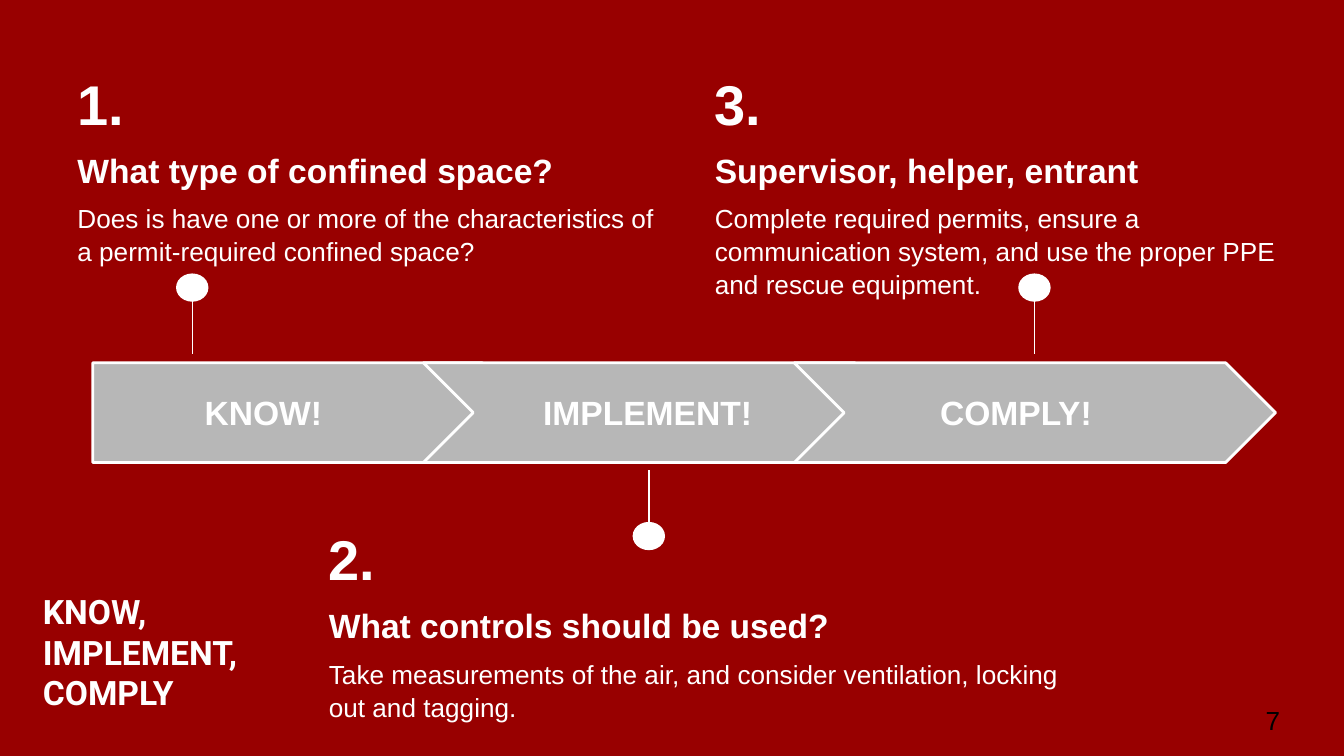
from dataclasses import dataclass

from pptx import Presentation
from pptx.dml.color import RGBColor
from pptx.enum.shapes import MSO_CONNECTOR, MSO_SHAPE
from pptx.enum.text import MSO_ANCHOR, MSO_AUTO_SIZE, PP_ALIGN
from pptx.oxml.ns import qn
from pptx.util import Pt


@dataclass(frozen=True)
class Theme:
    background: RGBColor = RGBColor(0x98, 0x00, 0x00)
    light: RGBColor = RGBColor(0xFF, 0xFF, 0xFF)
    arrow: RGBColor = RGBColor(0xB7, 0xB7, 0xB7)
    page: RGBColor = RGBColor(0x00, 0x00, 0x00)
    title_font: str = "Roboto"
    body_font: str = "Arial"
    number_size: float = 30
    heading_size: float = 18
    body_size: float = 14


THEME = Theme()
ARROW_TOP, ARROW_HEIGHT = 194.4, 53.4
LABEL_TOP, LABEL_HEIGHT = 203.8, 33.8
DOT_WIDTH, DOT_HEIGHT = 16.6, 14.4

# Arrow shape, arrow left and width, label, label left and width
ARROWS = [
    (MSO_SHAPE.PENTAGON, 49.7, 235.4, "KNOW!", 49.7, 182.9),
    (MSO_SHAPE.CHEVRON, 226.8, 257.8, "IMPLEMENT!", 264.2, 165.6),
    (MSO_SHAPE.CHEVRON, 425.5, 257.8, "COMPLY!", 461.5, 165.6),
]

# Marker centre, stem end at the arrow, stem end at the dot, dot top
MARKERS = [
    (103, 189.4, 149.8, 146.9),
    (347.6, 252, 291.6, 280),
    (554.2, 189.4, 149.8, 146.9),
]

# Left, top, width, number, heading, body
STEPS = [
    (34.4, 28.1, 331.2, "1.", "What type of confined space?",
     "Does is have one or more of the characteristics of a permit-required "
     "confined space?"),
    (169.1, 272.2, 424.1, "2.", "What controls should be used?",
     "Take measurements of the air, and consider ventilation, locking out "
     "and tagging."),
    (375.9, 28.1, 336.2, "3.", "Supervisor, helper, entrant",
     "Complete required permits, ensure a communication system, and use the "
     "proper PPE and rescue equipment."),
]


def place(shape, left, top, width, height):
    shape.left, shape.top = Pt(left), Pt(top)
    shape.width, shape.height = Pt(width), Pt(height)


def format_frame(frame, anchor):
    frame.word_wrap = True
    frame.auto_size = MSO_AUTO_SIZE.NONE
    frame.vertical_anchor = anchor
    frame.margin_left = frame.margin_right = Pt(7.2)
    frame.margin_top = frame.margin_bottom = Pt(7.2)


def write(paragraph, text, *, size, font=THEME.body_font, color=THEME.light,
          bold=True, align=PP_ALIGN.LEFT, after=0, spacing=1.0):
    paragraph.text = text
    paragraph.alignment = align
    paragraph.space_after = Pt(after)
    paragraph.line_spacing = spacing
    paragraph.font.name = font
    paragraph.font.size = Pt(size)
    paragraph.font.bold = bold
    paragraph.font.color.rgb = color


def add_text_frame(slide, left, top, width, height, anchor=MSO_ANCHOR.MIDDLE):
    box = slide.shapes.add_textbox(Pt(left), Pt(top), Pt(width), Pt(height))
    format_frame(box.text_frame, anchor)
    return box.text_frame


def add_filled_shape(slide, kind, left, top, width, height, fill, line_width):
    shape = slide.shapes.add_shape(kind, Pt(left), Pt(top), Pt(width), Pt(height))
    shape.shadow.inherit = False
    shape.fill.solid()
    shape.fill.fore_color.rgb = fill
    shape.line.color.rgb = THEME.light
    shape.line.width = Pt(line_width)
    return shape


def add_arrow(slide, kind, left, width, label, label_left, label_width):
    arrow = add_filled_shape(slide, kind, left, ARROW_TOP, width, ARROW_HEIGHT,
                             THEME.arrow, 1.5)
    arrow.adjustments[0] = 0.5
    frame = add_text_frame(slide, label_left, LABEL_TOP, label_width, LABEL_HEIGHT)
    write(frame.paragraphs[0], label, size=THEME.heading_size,
          align=PP_ALIGN.CENTER)


def add_marker(slide, center, stem_start, stem_end, dot_top):
    stem = slide.shapes.add_connector(MSO_CONNECTOR.STRAIGHT, Pt(center),
                                      Pt(stem_start), Pt(center), Pt(stem_end))
    stem.line.color.rgb = THEME.light
    stem.line.width = Pt(0.75)
    properties = stem._element.spPr
    properties.append(properties.makeelement(qn("a:effectLst"), {}))
    add_filled_shape(slide, MSO_SHAPE.OVAL, center - DOT_WIDTH / 2, dot_top,
                     DOT_WIDTH, DOT_HEIGHT, THEME.light, 0.75)


def add_step(slide, left, top, width, number, heading, body):
    frame = add_text_frame(slide, left, top, width, 64.8, MSO_ANCHOR.TOP)
    write(frame.paragraphs[0], number, size=THEME.number_size, after=6,
          spacing=1.05)
    write(frame.add_paragraph(), heading, size=THEME.heading_size, after=6,
          spacing=1.05)
    write(frame.add_paragraph(), body, size=THEME.body_size, bold=False,
          spacing=1.05)


def set_title(slide, text):
    title = slide.shapes.title
    place(title, 15.8, 357.1, 144, 31.7)
    format_frame(title.text_frame, MSO_ANCHOR.BOTTOM)
    write(title.text_frame.paragraphs[0], text, size=THEME.heading_size,
          font=THEME.title_font)


def main():
    presentation = Presentation()
    presentation.slide_width, presentation.slide_height = Pt(720), Pt(405)
    slide = presentation.slides.add_slide(presentation.slide_layouts[5])
    slide.background.fill.solid()
    slide.background.fill.fore_color.rgb = THEME.background

    # Title
    set_title(slide, "KNOW, \vIMPLEMENT, \vCOMPLY")

    # Process arrows, each with its marker and explanation
    for arrow, marker, step in zip(ARROWS, MARKERS, STEPS):
        add_arrow(slide, *arrow)
        add_marker(slide, *marker)
        add_step(slide, *step)

    # Page number
    page = add_text_frame(slide, 671, 370.1, 43.2, 31)
    write(page.paragraphs[0], "7", size=THEME.body_size, color=THEME.page,
          bold=False)

    presentation.save("out.pptx")


if __name__ == "__main__":
    main()
